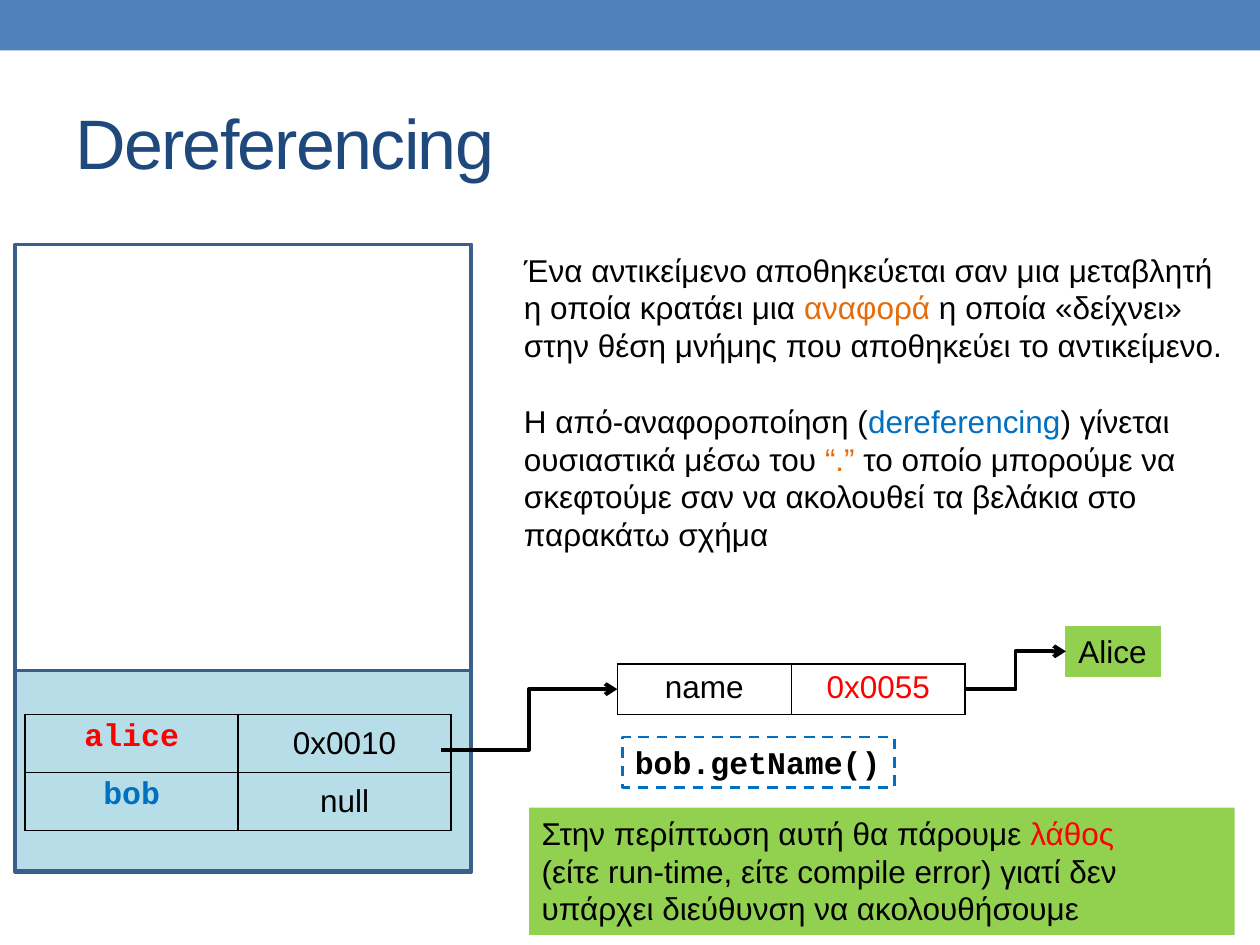
from lxml import etree
from pptx import Presentation
from pptx.dml.color import RGBColor
from pptx.enum import dml, shapes, text
from pptx.oxml import ns
from pptx.util import Inches, Pt

# Content: a paragraph is a list of (words, colour) spans
COLORS = {
    "band": "4F81BD", "title": "1F497D", "outline": "3A5F8C", "stack": "B7DEE8",
    "black": "000000", "red": "FF0000", "blue": "0070C0", "orange": "E46C0A",
    "green": "92D050",
}
SANS, MONO = "Arial", "Courier New"
TITLE = [[("Dereferencing", "title")]]
EXPLANATION = [
    [("Ένα αντικείμενο αποθηκεύεται σαν μια μεταβλητή η οποία κρατάει μια ", "black"),
     ("αναφορά", "orange"),
     (" η οποία «δείχνει» στην θέση μνήμης που αποθηκεύει το αντικείμενο.", "black")],
    [("Η από-αναφοροποίηση (", "black"), ("dereferencing", "blue"),
     (") γίνεται ουσιαστικά μέσω του ", "black"), ("“.” ", "orange"),
     ("το οποίο μπορούμε να σκεφτούμε σαν να ακολουθεί τα βελάκια στο παρακάτω σχήμα",
      "black")],
]
ERROR_NOTE = [
    [("Στην περίπτωση αυτή θα πάρουμε ", "black"), ("λάθος", "red")],
    [("(είτε run-time, είτε compile error) γιατί δεν υπάρχει διεύθυνση να ακολουθήσουμε",
      "black")],
]
NAME_VALUE = [[("Alice", "black")]]
CALL = [[("bob.getName()", "black")]]
# Table cells: words, colour, font
VARIABLES = [
    [("alice", "red", MONO), ("0x0010", "black", SANS)],
    [("bob", "blue", MONO), ("null", "black", SANS)],
]
OBJECT_FIELDS = [[("name", "black", SANS), ("0x0055", "red", SANS)]]
ARROWS = [((3.5, 5.95), (4.9, 5.47)), ((7.66, 5.47), (8.46, 5.17))]

deck = Presentation()
deck.slide_width, deck.slide_height = Inches(10), Inches(7.5)
page = deck.slides.add_slide(deck.slide_layouts[6])


def color(name):
    return RGBColor.from_string(COLORS[name])


def write(frame, paragraphs, font=SANS, size=18, gap=0, align=text.PP_ALIGN.LEFT):
    for index, spans in enumerate(paragraphs):
        para = frame.add_paragraph() if index else frame.paragraphs[0]
        para.alignment = align
        para.font.name, para.font.size = font, Pt(size)
        para.font.bold = font == MONO
        if index:
            para.space_before = Pt(gap)
        for words, tint in spans:
            span = para.add_run()
            span.text = words
            span.font.color.rgb = color(tint)


def add_box(area, fill=None, line=None, width=0.75, paragraphs=(), font=SANS, wrap=True):
    box = page.shapes.add_shape(shapes.MSO_SHAPE.RECTANGLE, *map(Inches, area))
    box.shadow.inherit = False
    if fill:
        box.fill.solid()
        box.fill.fore_color.rgb = color(fill)
    else:
        box.fill.background()
    if line:
        box.line.color.rgb = color(line)
        box.line.width = Pt(width)
    else:
        box.line.fill.background()
    box.text_frame.word_wrap = wrap
    box.text_frame.vertical_anchor = text.MSO_ANCHOR.TOP
    write(box.text_frame, paragraphs, font)
    return box


def add_text(area, paragraphs, **style):
    box = page.shapes.add_textbox(*map(Inches, area))
    box.text_frame.word_wrap = True
    write(box.text_frame, paragraphs, **style)
    return box


def add_borders(cell):
    properties = cell._tc.get_or_add_tcPr()
    for side in ("lnL", "lnR", "lnT", "lnB"):
        edge = etree.SubElement(properties, ns.qn(f"a:{side}"), w=str(Pt(1)))
        solid = etree.SubElement(edge, ns.qn("a:solidFill"))
        etree.SubElement(solid, ns.qn("a:srgbClr"), val=COLORS["black"])


def add_grid(left, top, column_width, row_height, rows, middle_columns=()):
    columns = len(rows[0])
    grid = page.shapes.add_table(
        len(rows), columns, Inches(left), Inches(top),
        Inches(column_width * columns), Inches(row_height * len(rows))).table
    grid.first_row = grid.horz_banding = False
    for r, row in enumerate(rows):
        for c, (words, tint, font) in enumerate(row):
            cell = grid.cell(r, c)
            add_borders(cell)
            cell.fill.background()
            if c in middle_columns:
                cell.vertical_anchor = text.MSO_ANCHOR.MIDDLE
            write(cell.text_frame, [[(words, tint)]], font, align=text.PP_ALIGN.CENTER)


def add_arrow(start, end):
    arrow = page.shapes.add_connector(
        shapes.MSO_CONNECTOR.ELBOW, *map(Inches, start + end))
    arrow.line.color.rgb = color("black")
    arrow.line.width = Pt(2.25)
    etree.SubElement(arrow.line._get_or_add_ln(), ns.qn("a:tailEnd"), type="arrow")
    etree.SubElement(arrow._element.spPr, ns.qn("a:effectLst"))


# Top band and title
add_box((0, 0, 10, 0.4), fill="band")
title = add_text((0.5, 0.58, 9, 1.08), TITLE, size=40)
title.text_frame.vertical_anchor = text.MSO_ANCHOR.MIDDLE
title.text_frame.paragraphs[0].runs[0].font._element.set("spc", "-100")

# Memory: stack area, variables, then the object on the heap
add_box((0.12, 5.32, 3.62, 1.59), fill="stack", line="outline", width=2.08)
add_grid(0.2, 5.67, 1.69, 0.46, VARIABLES, middle_columns=(1,))
add_grid(4.9, 5.27, 1.38, 0.36, OBJECT_FIELDS)
add_box((0.12, 1.94, 3.62, 4.98), line="outline", width=2.08)
add_box((8.46, 4.97, 0.75, 0.4), fill="green", line="green",
        paragraphs=NAME_VALUE, wrap=False)

# References
for start, end in ARROWS:
    add_arrow(start, end)

# Call, its result and the explanation
call = add_box((4.94, 5.85, 2.16, 0.4), line="blue", width=1.5,
               paragraphs=CALL, font=MONO, wrap=False)
call.line.dash_style = dml.MSO_LINE.DASH
add_box((4.2, 6.41, 5.6, 1.01), fill="green", paragraphs=ERROR_NOTE)
add_text((4.06, 1.94, 5.75, 2.52), EXPLANATION, gap=21.6)

deck.save("out.pptx")
